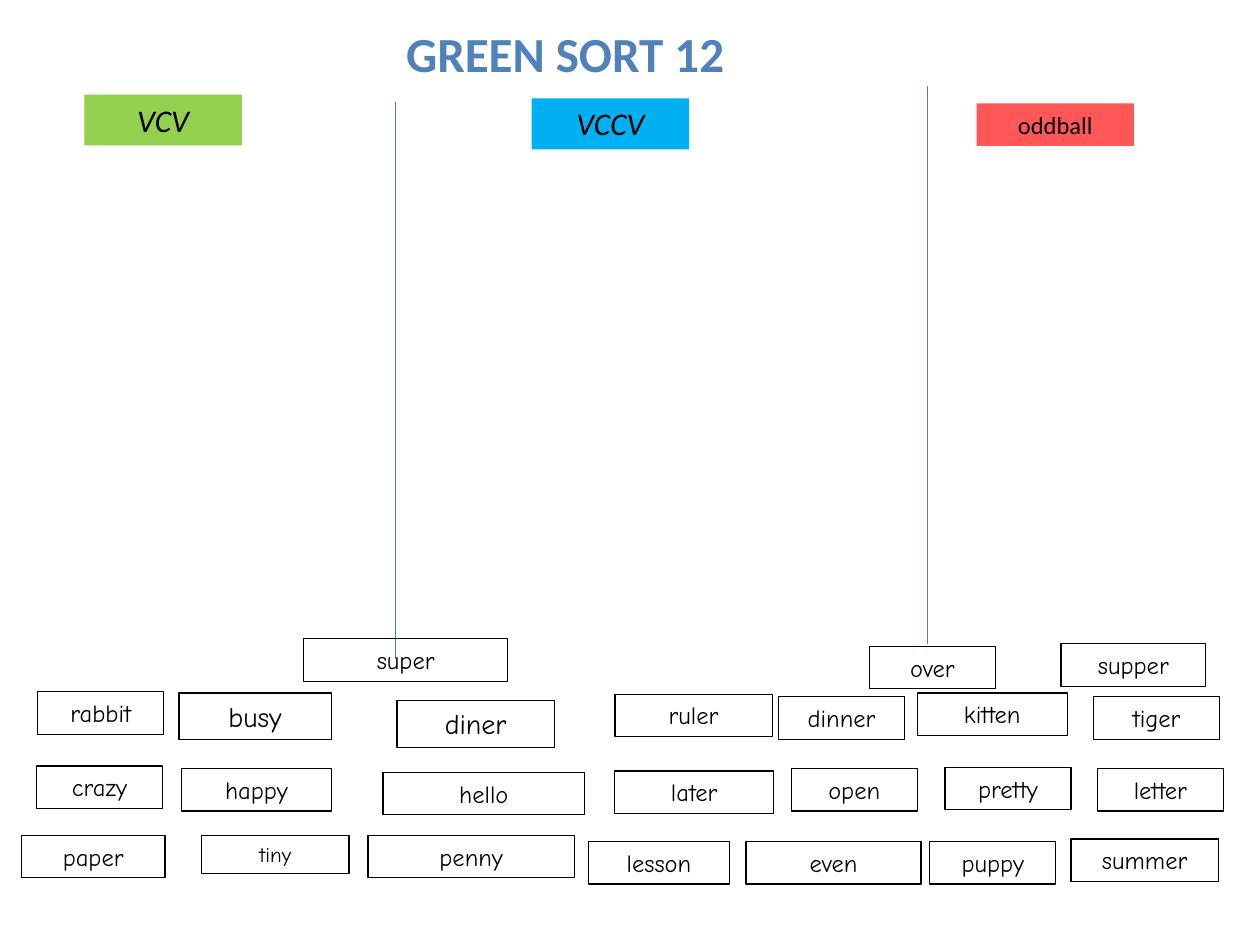
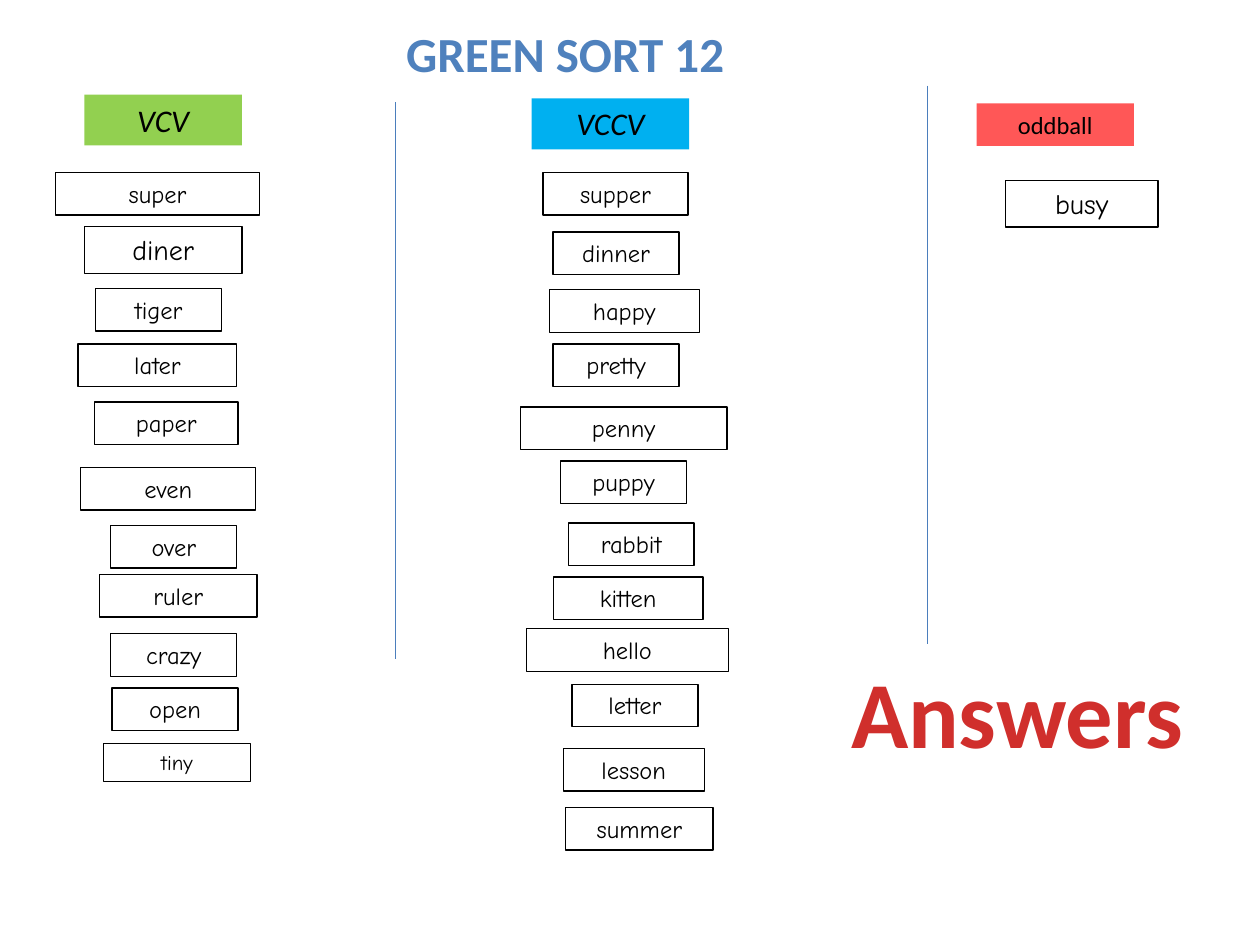
from dataclasses import dataclass

from lxml.etree import SubElement
from pptx import Presentation
from pptx.dml.color import RGBColor
from pptx.enum.shapes import MSO_CONNECTOR, MSO_SHAPE
from pptx.enum.text import MSO_ANCHOR, MSO_AUTO_SIZE, PP_ALIGN
from pptx.oxml.ns import qn
from pptx.util import Inches, Pt

# Grid of 100 columns by 75 rows, with square cells
COLUMNS, ROWS = 100, 75
SLIDE_WIDTH = Inches(10)
CELL = SLIDE_WIDTH // COLUMNS

COLORS = {
    "title": "4F81BD",
    "divider": "4B7EBC",
    "vcv": "92D050",
    "vccv": "00B0F0",
    "oddball": "FF5757",
    "answers": "D02F2C",
    "ink": "000000",
}
HEADING_FONT, WORD_FONT = "Calibri", "Comic Neue"
LABEL_WIDTH = 12.5

# Card widths in columns, and the sizes of cards that are not 14 point
CARD_WIDTHS = {
    "busy": 12.1, "diner": 12.5, "hello": 16, "ruler": 12.5, "penny": 16.4,
    "kitten": 11.9, "super": 16.2, "lesson": 11.2, "later": 12.6,
    "happy": 11.9, "even": 13.9, "summer": 11.7, "paper": 11.4,
    "supper": 11.5, "tiny": 11.7,
}
USUAL_CARD_WIDTH = 10
CARD_SIZES = {"busy": 16, "diner": 16, "tiny": 12}


@dataclass
class Box:
    """A region of the slide, in grid cells."""
    left: float
    top: float
    width: float
    height: float

    def inner(self, column, row, width, height):
        return Box(self.left + column, self.top + row, width, height)

    def lengths(self):
        return [round(cells * CELL)
                for cells in (self.left, self.top, self.width, self.height)]


PAGE = Box(0, 0, COLUMNS, ROWS)
SORT_COLUMNS = {
    "vcv": Box(0, 0, 31.4, ROWS),
    "vccv": Box(31.4, 0, 42.2, ROWS),
    "oddball": Box(73.6, 0, 26.4, ROWS),
}
WORD_BANK = Box(0, 50, COLUMNS, 25)

# Heading of each sort column: text, size, italic, column, row
LABELS = {
    "vcv": ("VCV", 18, True, 6.7, 7.5),
    "vccv": ("VCCV", 18, True, 10.8, 7.8),
    "oddball": ("oddball", 14, False, 3.9, 8.2),
}

# Cards as word, column, row inside their region
BANK_CARDS = [
    ("super", 24.1, 0.7), ("over", 69, 1.3), ("supper", 84.2, 1.1),
    ("rabbit", 3, 4.9), ("busy", 14.2, 5), ("diner", 31.5, 5.6),
    ("ruler", 48.8, 5.1), ("dinner", 61.8, 5.3), ("kitten", 72.8, 5),
    ("tiger", 86.8, 5.3),
    ("crazy", 2.9, 10.8), ("happy", 14.4, 11), ("hello", 30.4, 11.3),
    ("later", 48.8, 11.2), ("open", 62.8, 11), ("pretty", 75, 10.9),
    ("letter", 87.1, 11),
    ("paper", 1.7, 16.3), ("tiny", 16, 16.3), ("penny", 29.2, 16.3),
    ("lesson", 46.7, 16.8), ("even", 59.2, 16.8), ("puppy", 73.8, 16.8),
    ("summer", 85, 16.6),
]
SORTED_CARDS = {
    "vcv": [
        ("super", 4.4, 13.7), ("diner", 6.7, 18), ("tiger", 7.6, 22.9),
        ("later", 6.2, 27.3), ("paper", 7.5, 31.9), ("even", 6.4, 37.1),
        ("over", 8.8, 41.7), ("ruler", 7.9, 45.6), ("crazy", 8.8, 50.3),
        ("open", 8.9, 54.6), ("tiny", 8.2, 59),
    ],
    "vccv": [
        ("supper", 11.7, 13.7), ("dinner", 12.5, 18.4), ("happy", 12.2, 23),
        ("pretty", 12.5, 27.3), ("penny", 9.9, 32.3), ("puppy", 13.1, 36.6),
        ("rabbit", 13.7, 41.5), ("kitten", 12.5, 45.8), ("hello", 10.4, 49.9),
        ("letter", 14, 54.3), ("lesson", 13.3, 59.4), ("summer", 13.5, 64.1),
    ],
    "oddball": [("busy", 6.2, 14.3)],
}


def color(name):
    return RGBColor.from_string(COLORS[name])


def line_height(size):
    """Rows needed by one line of text with its top and bottom margins."""
    return 1 + size * 1.22 / 7.2


def write(shape, text, size, font_name, ink="ink", bold=False, italic=False,
          wrap=True):
    frame = shape.text_frame
    frame.word_wrap = wrap
    frame.auto_size = MSO_AUTO_SIZE.SHAPE_TO_FIT_TEXT
    frame.vertical_anchor = MSO_ANCHOR.TOP
    paragraph = frame.paragraphs[0]
    paragraph.alignment = PP_ALIGN.CENTER
    run = paragraph.add_run()
    run.text = text
    run.font.name, run.font.size = font_name, Pt(size)
    run.font.bold, run.font.italic = bold, italic
    run.font.color.rgb = color(ink)


def add_rectangle(slide, box, fill=None, outline=None):
    shape = slide.shapes.add_shape(MSO_SHAPE.RECTANGLE, *box.lengths())
    shape.shadow.inherit = False
    if fill:
        shape.fill.solid()
        shape.fill.fore_color.rgb = color(fill)
    else:
        shape.fill.background()
    if outline:
        shape.line.color.rgb = color(outline)
        shape.line.width = Pt(0.75)
    else:
        shape.line.fill.background()
    return shape


def add_heading(slide, box, text, size, ink, wrap=True):
    shape = slide.shapes.add_textbox(*box.lengths())
    write(shape, text, size, HEADING_FONT, ink, bold=True, wrap=wrap)


def add_label(slide, box, name):
    text, size, italic, column, row = LABELS[name]
    place = box.inner(column, row, LABEL_WIDTH, line_height(size))
    shape = add_rectangle(slide, place, fill=name)
    write(shape, text, size, HEADING_FONT, italic=italic)


def add_divider(slide, box, top, bottom):
    """Draw a rule down the left edge of a sort column."""
    x, start, _, length = box.inner(0, top, 0, bottom - top).lengths()
    connector = slide.shapes.add_connector(
        MSO_CONNECTOR.STRAIGHT, x, start, x, start + length)
    connector.line.color.rgb = color("divider")
    connector.line.width = Pt(0.75)
    SubElement(connector._element.spPr, qn("a:effectLst"))


def add_cards(slide, box, cards):
    for word, column, row in cards:
        size = CARD_SIZES.get(word, 14)
        width = CARD_WIDTHS.get(word, USUAL_CARD_WIDTH)
        place = box.inner(column, row, width, line_height(size))
        shape = add_rectangle(slide, place, outline="ink")
        write(shape, word, size, WORD_FONT)


def add_sort_slide(presentation):
    """Add the title, column labels and dividers that both slides share."""
    slide = presentation.slides.add_slide(presentation.slide_layouts[6])
    for name, box in SORT_COLUMNS.items():
        add_label(slide, box, name)
    add_divider(slide, SORT_COLUMNS["oddball"], 6.8, 51.1)
    add_divider(slide, SORT_COLUMNS["vccv"], 8.1, 52.3)
    title_box = PAGE.inner(21.8, 1.4, 46.1, line_height(28))
    add_heading(slide, title_box, "GREEN SORT 12", 28, "title")
    return slide


def main():
    presentation = Presentation()
    presentation.slide_width = SLIDE_WIDTH
    presentation.slide_height = CELL * ROWS

    # Words to sort
    add_cards(add_sort_slide(presentation), WORD_BANK, BANK_CARDS)

    # Words in their columns
    answer_slide = add_sort_slide(presentation)
    for name, cards in SORTED_CARDS.items():
        add_cards(answer_slide, SORT_COLUMNS[name], cards)
    answers_box = PAGE.inner(66.4, 51.4, 28.7, line_height(54))
    add_heading(answer_slide, answers_box, "Answers", 54, "answers", wrap=False)

    presentation.save("out.pptx")


if __name__ == "__main__":
    main()
